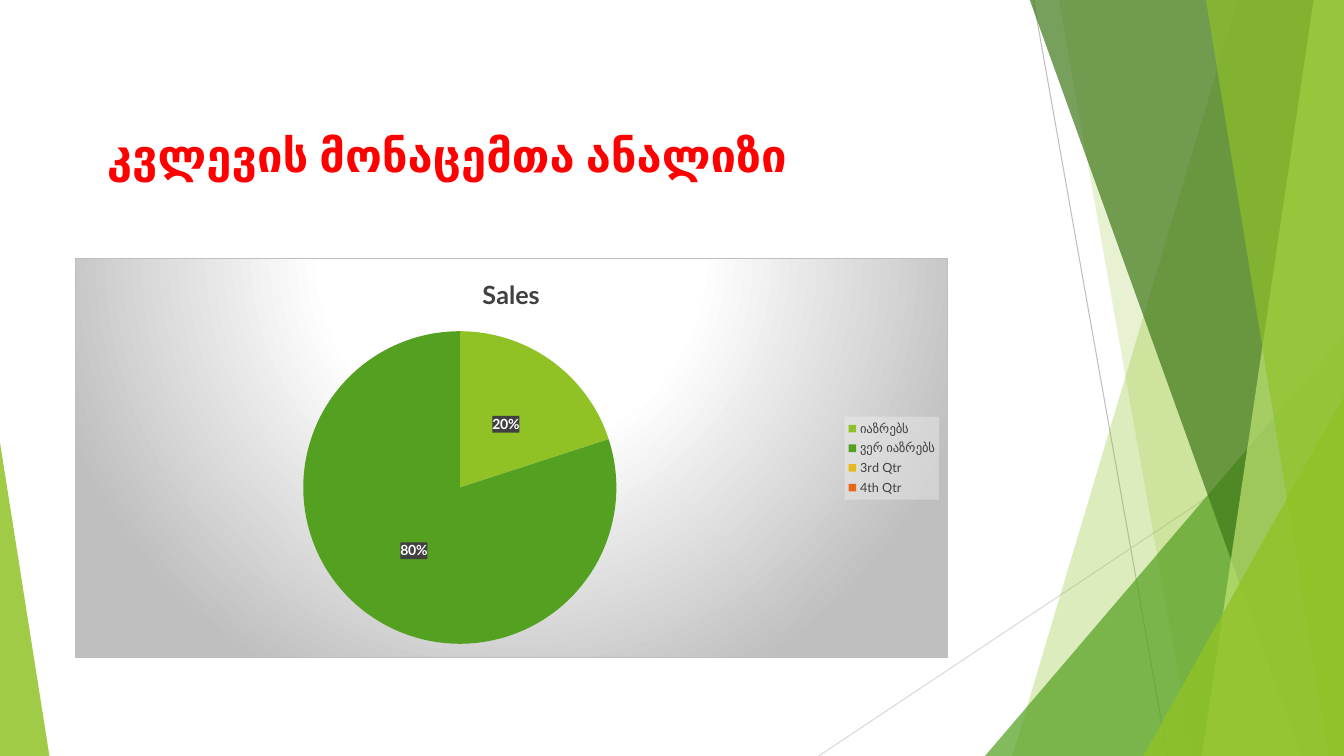
"""Build a slide with a pie chart of survey results beside green facets."""
import pptx
import pptx.util
import pptx.oxml
import pptx.oxml.ns
import pptx.chart.data
import pptx.dml.color
import pptx.enum.chart
import pptx.enum.shapes
import pptx.enum.text

RGB = pptx.dml.color.RGBColor
RED = RGB(0xFF, 0x00, 0x00)
WHITE = RGB(0xFF, 0xFF, 0xFF)
BLACK = RGB(0x00, 0x00, 0x00)
DARK = RGB(0x40, 0x40, 0x40)
PALE = RGB(0xF2, 0xF2, 0xF2)
SILVER = RGB(0xBF, 0xBF, 0xBF)
MIST = RGB(0xD9, 0xD9, 0xD9)
LIME = RGB(0x90, 0xC2, 0x26)
GREEN = RGB(0x54, 0xA0, 0x21)
FOREST = RGB(0x3F, 0x78, 0x19)
MINT = RGB(0xC0, 0xE4, 0x74)
GOLD = RGB(0xE6, 0xB9, 0x1E)
ORANGE = RGB(0xE7, 0x66, 0x18)

SCALE = 9144
WIDE, HIGH = 1333, 750


def px(*sizes):
    return [pptx.util.Emu(size * SCALE) for size in sizes]


def solid(color, alpha):
    return (f'<a:solidFill><a:srgbClr val="{color}">'
            f'<a:alpha val="{alpha * 1000}"/></a:srgbClr></a:solidFill>')


def glow(stops):
    marks = "".join(f'<a:gs pos="{pos * 1000}"><a:srgbClr val="{color}"/></a:gs>'
                    for pos, color in stops)
    return (f'<a:gradFill><a:gsLst>{marks}</a:gsLst><a:path path="circle">'
            '<a:fillToRect l="50000" t="-80000" r="50000" b="180000"/>'
            '</a:path></a:gradFill>')


class Deck:
    def __init__(self, font):
        self.font = font
        self.show = pptx.Presentation()
        self.show.slide_width, self.show.slide_height = px(WIDE, HIGH)
        self.slide = self.show.slides.add_slide(self.show.slide_layouts[5])
        self.shapes = self.slide.shapes

    def style(self, font, size, color, bold=False):
        font.name, font.size, font.bold = self.font, pptx.util.Pt(size), bold
        font.color.rgb = color

    def line(self, start, end, color):
        kind = pptx.enum.shapes.MSO_CONNECTOR.STRAIGHT
        line = self.shapes.add_connector(kind, *px(*start, *end))
        line.line.color.rgb = color
        line.line.width = pptx.util.Pt(0.75)
        line._element.spPr.append(pptx.oxml.parse_xml(
            f'<a:effectLst {pptx.oxml.ns.nsdecls("a")}/>'))

    def tint(self, shape, color, alpha):
        shape.shadow.inherit = False
        shape.fill.solid()
        shape.fill.fore_color.rgb = color
        shape.line.fill.background()
        tone = shape._element.spPr.xpath("./a:solidFill/a:srgbClr")[0]
        tone.append(pptx.oxml.parse_xml(
            f'<a:alpha {pptx.oxml.ns.nsdecls("a")} val="{alpha * 1000}"/>'))

    def facet(self, top, base, color, alpha):
        build = self.shapes.build_freeform(top, -1, scale=SCALE)
        build.add_line_segments([(WIDE, -1), (WIDE, HIGH), (base, HIGH)])
        self.tint(build.convert_to_shape(), color, alpha)

    def wedge(self, left, width, height, peak, color, alpha):
        kind = pptx.enum.shapes.MSO_SHAPE.ISOSCELES_TRIANGLE
        box = px(left, HIGH - height, width, height)
        wedge = self.shapes.add_shape(kind, *box)
        wedge.adjustments[0] = peak
        self.tint(wedge, color, alpha)

    def title(self, box, text, size, color):
        title = self.shapes.title
        title.left, title.top, title.width, title.height = px(*box)
        frame = title.text_frame
        frame.word_wrap = True
        frame.auto_size = pptx.enum.text.MSO_AUTO_SIZE.NONE
        frame.vertical_anchor = pptx.enum.text.MSO_ANCHOR.MIDDLE
        frame.margin_left, frame.margin_top, frame.margin_bottom = px(32, 28, 0)
        line = frame.paragraphs[0]
        line.alignment = pptx.enum.text.PP_ALIGN.LEFT
        run = line.add_run()
        run.text = text
        self.style(run.font, size, color, True)

    def paint(self, part, fill, edge=""):
        names = pptx.oxml.ns.nsdecls("c", "a")
        part.xpath("./c:txPr")[0].addprevious(pptx.oxml.parse_xml(
            f"<c:spPr {names}>{fill}{edge}</c:spPr>"))

    def pie(self, box, name, slices):
        data = pptx.chart.data.CategoryChartData()
        data.categories = [label for label, value, color in slices]
        data.add_series(name, [value for label, value, color in slices])
        kind = pptx.enum.chart.XL_CHART_TYPE.PIE
        chart = self.shapes.add_chart(kind, *px(*box), data).chart
        self.style(chart.font, 10, BLACK)
        edge = f'<a:ln w="9525">{solid(SILVER, 100)}</a:ln>'
        self.paint(chart._chartSpace,
                   glow([(0, WHITE), (39, WHITE), (100, SILVER)]), edge)

        chart.has_title = True
        run = chart.chart_title.text_frame.paragraphs[0].add_run()
        run.text = name
        self.style(run.font, 18, DARK, True)

        chart.has_legend = True
        legend = chart.legend
        legend.position = pptx.enum.chart.XL_LEGEND_POSITION.RIGHT
        legend.include_in_layout = False
        self.style(legend.font, 9, DARK)
        self.paint(legend._element, solid(PALE, 39))

        plot = chart.plots[0]
        plot.vary_by_categories = True
        series = plot.series[0]
        labels = series.data_labels
        labels.show_percentage, labels.show_value = True, False
        labels.number_format, labels.number_format_is_linked = "0%", False
        labels.position = pptx.enum.chart.XL_LABEL_POSITION.CENTER
        self.style(labels.font, 10, WHITE, True)
        self.paint(labels._element, solid(DARK, 100))
        first = labels._element[0]
        for spot, (label, value, color) in enumerate(slices):
            fill = series.points[spot].format.fill
            fill.solid()
            fill.fore_color.rgb = color
            if not value:
                first.addprevious(pptx.oxml.parse_xml(
                    f'<c:dLbl {pptx.oxml.ns.nsdecls("c")}>'
                    f'<c:idx val="{spot}"/><c:delete val="1"/></c:dLbl>'))


def main():
    deck = Deck("Lato")
    deck.line((1025, 0), (1158, HIGH), SILVER)
    deck.line((WIDE, 403), (812, HIGH), MIST)
    deck.facet(1228, 1004, LIME, 30)
    deck.facet(1050, 1183, LIME, 20)
    deck.wedge(977, 356, 417, 1, GREEN, 72)
    deck.facet(1021, 1291, FOREST, 70)
    deck.facet(1303, 1192, MINT, 70)
    deck.facet(1196, 1318, LIME, 65)
    deck.wedge(1134, 199, 357, 1, LIME, 80)
    deck.wedge(0, 49, 311, 0, LIME, 85)
    deck.title((74, 67, 940, 144), "კვლევის მონაცემთა ანალიზი", 32.4, RED)
    deck.pie((74, 256, 866, 397), "Sales", [
        ("იაზრებს", 20, LIME),
        ("ვერ იაზრებს", 80, GREEN),
        ("3rd Qtr", 0, GOLD),
        ("4th Qtr", 0, ORANGE),
    ])
    deck.show.save("out.pptx")


if __name__ == "__main__":
    main()
